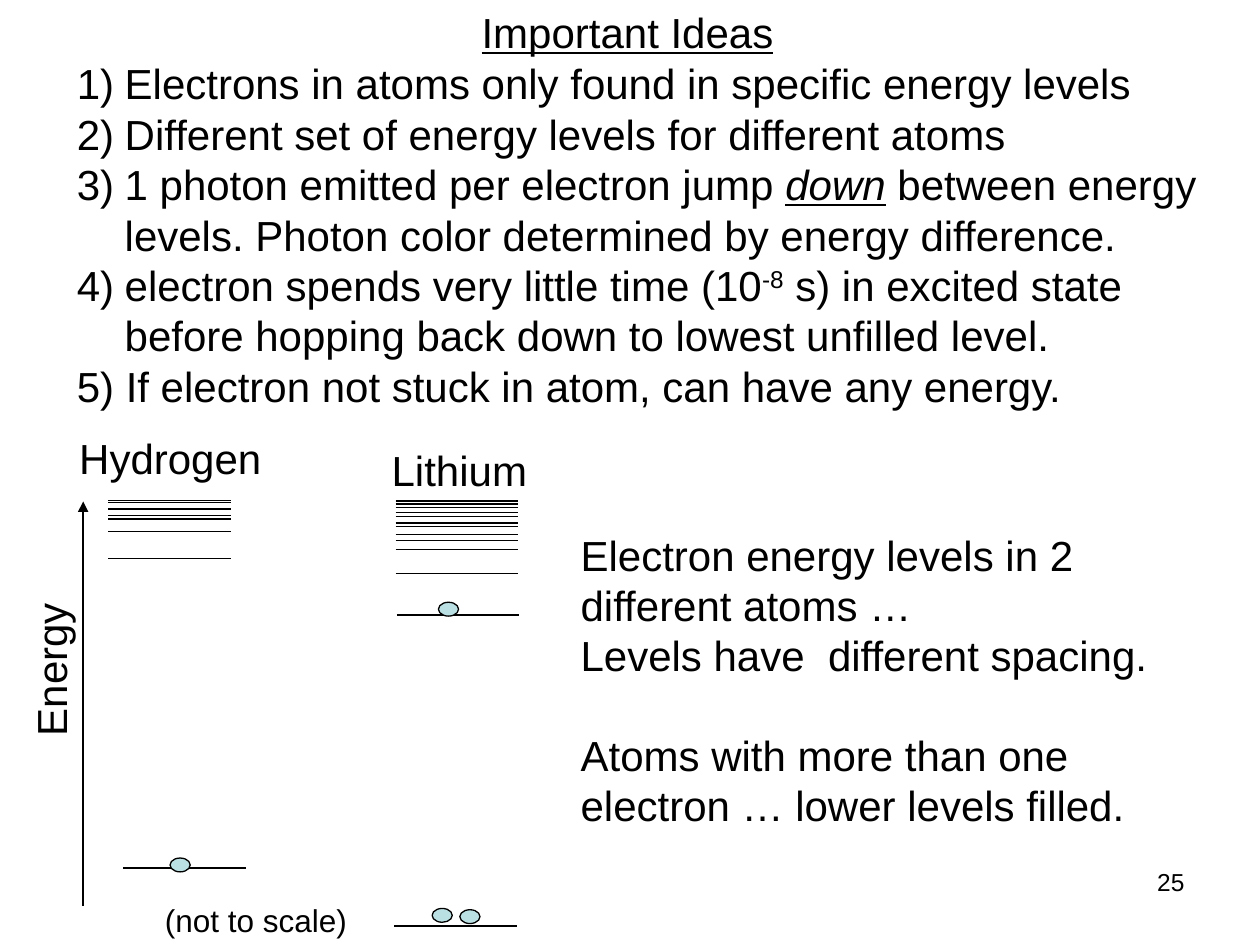
from dataclasses import dataclass

from lxml.etree import SubElement
from pptx import Presentation
from pptx.dml.color import RGBColor
from pptx.enum.shapes import MSO_CONNECTOR, MSO_SHAPE
from pptx.enum.text import MSO_ANCHOR, MSO_AUTO_SIZE, PP_ALIGN
from pptx.oxml.ns import qn
from pptx.util import Inches, Pt

BLACK = RGBColor(0x00, 0x00, 0x00)
ELECTRON_BLUE = RGBColor(0xBB, 0xE0, 0xE3)
FONT = "Arial"
COLUMNS, ROWS = 100, 75
SLIDE_WIDTH, SLIDE_HEIGHT = Inches(10), Inches(7.5)
LEVEL_COLUMNS = 9.7
INDENT = Inches(0.38)

IDEAS = (
    ("Electrons in atoms only found in specific energy levels",),
    ("Different set of energy levels for different atoms",),
    ("1 photon emitted per electron jump ", "down",
     " between energy levels. Photon color determined by energy difference."),
    ("electron spends very little time (10", "-8",
     " s) in excited state before hopping back down to lowest unfilled level."),
    ("5) If electron not stuck in atom, can have any energy.",),
)
NUMBERED_IDEAS = 4


@dataclass(frozen=True)
class Box:
    """A rectangle in grid columns and rows."""
    column: float
    row: float
    columns: float
    rows: float


@dataclass(frozen=True)
class Label:
    """Paragraphs of text placed on the grid."""
    paragraphs: tuple[str, ...]
    box: Box
    size: int = 24
    wrap: bool = False
    rotation: int = 0
    alignment: PP_ALIGN = PP_ALIGN.LEFT


@dataclass(frozen=True)
class Atom:
    """Energy levels as rows by starting column, and electrons by column and row."""
    levels: dict[float, tuple[float, ...]]
    electrons: tuple[tuple[float, float], ...]


ATOMS = (
    Atom({9.8: (68.9,), 8.6: (44.3, 42.2, 41.2, 40.9, 40.4, 39.9, 39.7)},
         ((13.5, 68.1),)),
    Atom({31.3: (73.5,), 31.5: (48.8,),
          31.4: (45.5, 43.6, 42.9, 42.4, 41.8, 41.5, 41.0, 40.7, 40.3, 40.0, 39.8, 39.7)},
         ((34.3, 72.1), (36.5, 72.2), (34.8, 47.8))),
)

LABELS = (
    Label(("Hydrogen",), Box(5.3, 33.8, 16.5, 5)),
    Label(("Lithium",), Box(30.1, 34.8, 12.8, 5)),
    Label(("Energy",), Box(-2.3, 50.6, 12.6, 5), rotation=270),
    Label(("(not to scale)",), Box(12.1, 71, 16.5, 4), size=18),
    Label(("Electron energy levels in 2 different atoms …",
           "Levels have  different spacing.",
           "Atoms with more than one electron … lower levels filled."),
          Box(45.1, 41.5, 49.8, 25), wrap=True),
    Label(("25",), Box(71.7, 68.3, 23.3, 5.2), size=14, wrap=True, alignment=PP_ALIGN.RIGHT),
)


def across(columns: float) -> int:
    """Convert grid columns to a length."""
    return round(SLIDE_WIDTH * columns / COLUMNS)


def down(rows: float) -> int:
    """Convert grid rows to a length."""
    return round(SLIDE_HEIGHT * rows / ROWS)


def place(box: Box) -> tuple[int, int, int, int]:
    """Return left, top, width and height of a box."""
    return across(box.column), down(box.row), across(box.columns), down(box.rows)


def format_text(shape, size: int = 24, wrap: bool = True, alignment=PP_ALIGN.LEFT) -> None:
    """Apply the common text settings to a shape."""
    frame = shape.text_frame
    frame.word_wrap = wrap
    frame.auto_size = MSO_AUTO_SIZE.NONE
    frame.vertical_anchor = MSO_ANCHOR.TOP
    for paragraph in frame.paragraphs:
        paragraph.alignment = alignment
        paragraph.space_before = Pt(0)
        for run in paragraph.runs:
            run.font.name = FONT
            run.font.size = Pt(size)
            run.font.color.rgb = BLACK


def fill_title(title) -> None:
    """Write the underlined slide title."""
    title.left, title.top, title.width, title.height = place(Box(37.2, 0, 25.2, 5))
    title.text_frame.text = "Important Ideas"
    format_text(title, wrap=False, alignment=PP_ALIGN.CENTER)
    title.text_frame.paragraphs[0].runs[0].font.underline = True


def fill_ideas(body) -> None:
    """Write the list of ideas with hanging numbers."""
    body.left, body.top, body.width, body.height = place(Box(5.1, 4.1, 94.9, 29))
    frame = body.text_frame
    for index, parts in enumerate(IDEAS):
        paragraph = frame.add_paragraph() if index else frame.paragraphs[0]
        for part in parts:
            paragraph.add_run().text = part
    format_text(body)
    for index, paragraph in enumerate(frame.paragraphs):
        properties = paragraph._p.get_or_add_pPr()
        properties.set("marL", str(INDENT))
        properties.set("indent", str(-INDENT))
        if index < NUMBERED_IDEAS:
            SubElement(properties, qn("a:buFontTx"))
            SubElement(properties, qn("a:buAutoNum"), type="arabicParenR")
        else:
            SubElement(properties, qn("a:buNone"))
    emphasis = frame.paragraphs[2].runs[1].font
    emphasis.italic = emphasis.underline = True
    frame.paragraphs[3].runs[1]._r.get_or_add_rPr().set("baseline", "30000")


def add_label(slide, label: Label):
    """Add a text box for a label."""
    shape = slide.shapes.add_textbox(*place(label.box))
    shape.rotation = label.rotation
    shape.text_frame.text = "\n".join(label.paragraphs)
    format_text(shape, label.size, label.wrap, label.alignment)
    return shape


def add_line(slide, start: tuple[float, float], end: tuple[float, float]):
    """Add a thin black line between two grid points."""
    line = slide.shapes.add_connector(
        MSO_CONNECTOR.STRAIGHT, across(start[0]), down(start[1]), across(end[0]), down(end[1]))
    line.line.color.rgb = BLACK
    line.line.width = Pt(0.75)
    SubElement(line._element.spPr, qn("a:effectLst"))
    return line


def add_electron(slide, column: float, row: float) -> None:
    """Add an electron as a small ellipse."""
    electron = slide.shapes.add_shape(MSO_SHAPE.OVAL, *place(Box(column, row, 1.6, 1.1)))
    electron.shadow.inherit = False
    electron.fill.solid()
    electron.fill.fore_color.rgb = ELECTRON_BLUE
    electron.line.color.rgb = BLACK
    electron.line.width = Pt(0.75)


def add_atom(slide, atom: Atom) -> None:
    """Add the levels of an atom, then its electrons."""
    for column, rows in atom.levels.items():
        for row in rows:
            add_line(slide, (column, row), (column + LEVEL_COLUMNS, row))
    for column, row in atom.electrons:
        add_electron(slide, column, row)


def main() -> None:
    """Build and save the slide."""
    presentation = Presentation()
    presentation.slide_width, presentation.slide_height = SLIDE_WIDTH, SLIDE_HEIGHT
    slide = presentation.slides.add_slide(presentation.slide_layouts[1])
    fill_title(slide.shapes.title)
    fill_ideas(slide.placeholders[1])
    for atom in ATOMS:
        add_atom(slide, atom)
    axis = add_line(slide, (6.6, 71.9), (6.6, 39.8))
    SubElement(axis.line._get_or_add_ln(), qn("a:tailEnd"), type="triangle")
    for label in LABELS:
        shape = add_label(slide, label)
        if len(label.paragraphs) > 1:
            shape.text_frame.paragraphs[-1].space_before = Pt(28)
    presentation.save("out.pptx")


if __name__ == "__main__":
    main()
